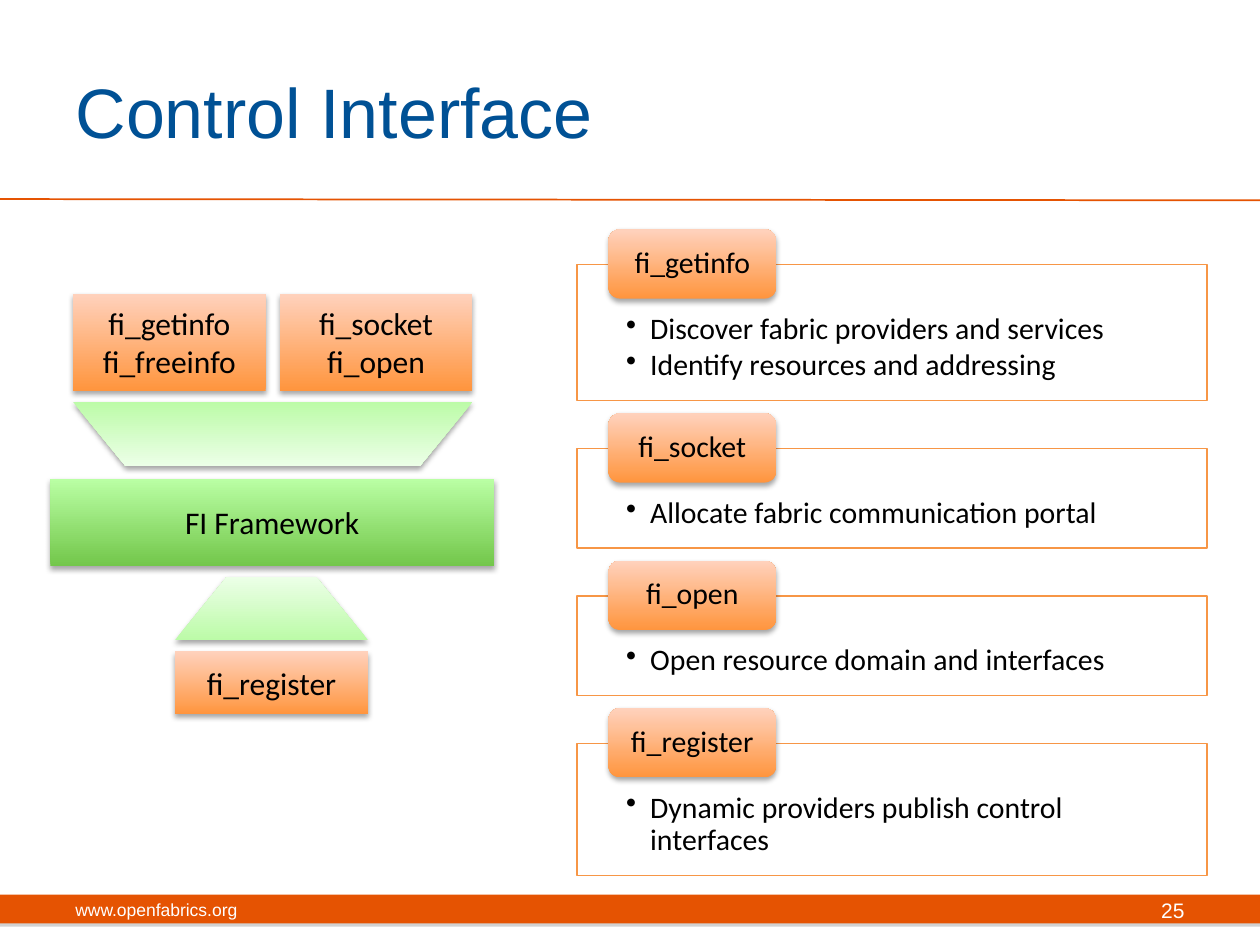
import pptx
import pptx.dml.color
import pptx.enum.shapes
import pptx.enum.text
import pptx.oxml
import pptx.oxml.ns
import pptx.util
from lxml import etree

Inches = pptx.util.Inches
Pt = pptx.util.Pt
SHAPE = pptx.enum.shapes.MSO_SHAPE
ALIGN = pptx.enum.text.PP_ALIGN
ANCHOR = pptx.enum.text.MSO_ANCHOR
qn = pptx.oxml.ns.qn

COLORS = {
    "white": "FFFFFF", "black": "000000", "gray": "808080", "title": "005195",
    "bar": "E55302", "panel_line": "F79646",
}
GRADIENTS = {
    "orange": ("FF953E", "FFD2BD"),
    "green": ("73C74B", "BAFFA4"),
    "pale": ("BCFBA8", "ECFFE7"),
}
PANELS = [
    ("fi_getinfo", 1.08, ["Discover fabric providers and services",
                          "Identify resources and addressing"]),
    ("fi_socket", 0.79, ["Allocate fabric communication portal"]),
    ("fi_open", 0.79, ["Open resource domain and interfaces"]),
    ("fi_register", 1.05, ["Dynamic providers publish control interfaces"]),
]
PANEL_LEFT, PANEL_TOP, PANEL_GAP = 4.58, 2.1, 0.38


def rgb(name):
    return pptx.dml.color.RGBColor.from_string(COLORS[name])


def add_run(paragraph, text, size, font="Calibri", color="black"):
    run = paragraph.add_run()
    run.text = text
    run.font.size = Pt(size)
    run.font.name = font
    run.font.color.rgb = rgb(color)


def set_insets(frame, left, top, right, bottom):
    frame.margin_left, frame.margin_top = Inches(left), Inches(top)
    frame.margin_right, frame.margin_bottom = Inches(right), Inches(bottom)


def add_shadow(shape, color="black", opacity=35, blur=3.1, distance=1.8):
    shape.shadow.inherit = False
    effects = shape._element.spPr.find(qn("a:effectLst"))
    shadow = etree.SubElement(effects, qn("a:outerShdw"), blurRad=str(Pt(blur)),
                              dist=str(Pt(distance)), dir="5400000", rotWithShape="0")
    tint = etree.SubElement(shadow, qn("a:srgbClr"), val=COLORS[color])
    etree.SubElement(tint, qn("a:alpha"), val=str(opacity * 1000))


def add_block(slide, kind, box, gradient, lines=(), size=18):
    shape = slide.shapes.add_shape(kind, *map(Inches, box))
    shape.fill.gradient()
    shape.fill.gradient_angle = 90
    for stop, color in zip(shape.fill.gradient_stops, GRADIENTS[gradient]):
        stop.color.rgb = pptx.dml.color.RGBColor.from_string(color)
    shape.line.fill.background()
    add_shadow(shape)
    paragraph = shape.text_frame.paragraphs[0]
    paragraph.alignment = ALIGN.CENTER
    for index, line in enumerate(lines):
        if index:
            paragraph.add_line_break()
        add_run(paragraph, line, size)
    return shape


def add_funnel(slide, box, flipped=False):
    funnel = add_block(slide, SHAPE.TRAPEZOID, box, "pale")
    funnel.adjustments[0] = 0.82
    if flipped:
        funnel._element.spPr.xfrm.set("flipV", "1")


def add_bullet(paragraph, text):
    properties = paragraph._p.get_or_add_pPr()
    properties.set("marL", str(Inches(0.19)))
    properties.set("indent", str(Inches(-0.19)))
    etree.SubElement(properties, qn("a:buChar"), char="•")
    paragraph.alignment = ALIGN.LEFT
    paragraph.line_spacing = 0.9
    paragraph.space_after = Pt(2.5)
    add_run(paragraph, text, 17)


def add_panel(slide, top, height, heading, bullets):
    panel = slide.shapes.add_shape(SHAPE.RECTANGLE, Inches(PANEL_LEFT), Inches(top),
                                   Inches(5), Inches(height))
    panel.shadow.inherit = False
    panel.fill.solid()
    panel.fill.fore_color.rgb = rgb("white")
    panel.line.color.rgb = rgb("panel_line")
    panel.line.width = Pt(0.75)
    frame = panel.text_frame
    frame.vertical_anchor = ANCHOR.TOP
    set_insets(frame, 0.39, 0.39, 0.39, 0.13)
    for index, bullet in enumerate(bullets):
        paragraph = frame.add_paragraph() if index else frame.paragraphs[0]
        add_bullet(paragraph, bullet)
    tab = add_block(slide, SHAPE.ROUNDED_RECTANGLE,
                    (PANEL_LEFT + 0.25, top - 0.28, 1.33, 0.55), "orange", [heading], 17)
    set_insets(tab.text_frame, 0.13, 0, 0.13, 0)
    tab.text_frame.paragraphs[0].line_spacing = 0.9


def add_title(slide, text):
    title = slide.shapes.title
    title.left, title.top = Inches(0.5), Inches(0.25)
    title.width, title.height = Inches(8.17), Inches(1.25)
    title.text_frame.vertical_anchor = ANCHOR.MIDDLE
    paragraph = title.text_frame.paragraphs[0]
    paragraph.alignment = ALIGN.LEFT
    add_run(paragraph, text, 40, "Arial", "title")


def add_footer_text(slide, left, width, text, size, alignment):
    box = slide.shapes.add_textbox(Inches(left), Inches(7.02), Inches(width), Inches(0.4))
    box.text_frame.word_wrap = True
    box.text_frame.vertical_anchor = ANCHOR.MIDDLE
    paragraph = box.text_frame.paragraphs[0]
    paragraph.alignment = alignment
    add_run(paragraph, text, size, "Arial", "white")


def add_frame(slide):
    bar = slide.shapes.add_shape(SHAPE.RECTANGLE, 0, Inches(7.1), Inches(10), Inches(0.23))
    bar.fill.solid()
    bar.fill.fore_color.rgb = rgb("bar")
    bar.line.fill.background()
    add_shadow(bar, "gray", blur=0)
    rule = slide.shapes.add_connector(pptx.enum.shapes.MSO_CONNECTOR.STRAIGHT,
                                      0, Inches(1.58), Inches(10), Inches(1.59))
    rule.line.color.rgb = rgb("bar")
    rule.line.width = Pt(1)
    etree.SubElement(rule._element.spPr, qn("a:effectLst"))
    add_footer_text(slide, 0.5, 3.17, "www.openfabrics.org", 10, ALIGN.LEFT)
    add_footer_text(slide, 7.17, 2.33, "25", 12, ALIGN.RIGHT)


def add_framework(slide):
    box = SHAPE.RECTANGLE
    add_block(slide, box, (0.4, 3.8, 3.52, 0.69), "green", ["FI Framework"])
    add_funnel(slide, (0.58, 3.19, 3.17, 0.51), flipped=True)
    add_funnel(slide, (1.39, 4.58, 1.53, 0.5))
    add_block(slide, box, (0.58, 2.33, 1.53, 0.77), "orange", ["fi_getinfo", "fi_freeinfo"])
    add_block(slide, box, (2.22, 2.33, 1.53, 0.77), "orange", ["fi_socket", "fi_open"])
    add_block(slide, box, (1.39, 5.17, 1.53, 0.5), "orange", ["fi_register"])


def main():
    presentation = pptx.Presentation()
    presentation.slide_width, presentation.slide_height = Inches(10), Inches(7.5)
    slide = presentation.slides.add_slide(presentation.slide_layouts[5])
    add_frame(slide)
    add_title(slide, "Control Interface")
    top = PANEL_TOP
    for heading, height, bullets in PANELS:
        add_panel(slide, top, height, heading, bullets)
        top += height + PANEL_GAP
    add_framework(slide)
    presentation.save("out.pptx")


if __name__ == "__main__":
    main()
